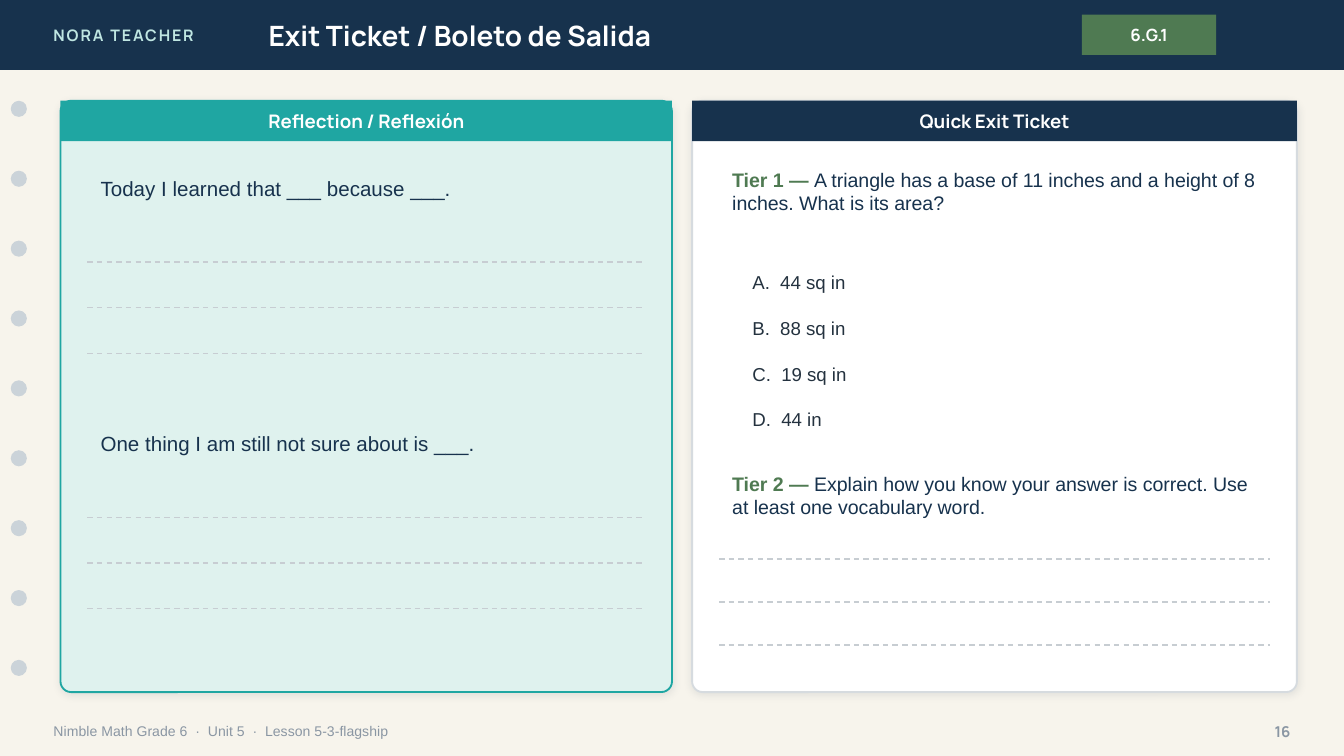
from lxml.etree import SubElement
from pptx import Presentation
from pptx.dml.color import RGBColor
from pptx.enum.dml import MSO_LINE
from pptx.enum.shapes import MSO_CONNECTOR, MSO_SHAPE
from pptx.enum.text import MSO_ANCHOR, PP_ALIGN
from pptx.oxml.ns import qn
from pptx.util import Inches, Pt

NAVY, TEAL, GREEN, WHITE = "17324D", "1FA6A2", "4F7A52", "FFFFFF"
MINT, CREAM, GRAY, RULE = "DFF2EE", "F7F4EC", "8A96A3", "C7CDD2"
HEADING, BODY = "Manrope", "Arial"

BRAND = "NORA TEACHER"
TITLE = "Exit Ticket / Boleto de Salida"
STANDARD = "6.G.1"
FOOTER = "Nimble Math Grade 6  ·  Unit 5  ·  Lesson 5-3-flagship"
PAGE = "16"
PROMPTS = ["Today I learned that ___ because ___.",
           "One thing I am still not sure about is ___."]
QUESTIONS = [
    ("Tier 1 — ", "A triangle has a base of 11 inches and a height of 8 inches. "
                  "What is its area?", 1.2, 0.7),
    ("Tier 2 — ", "Explain how you know your answer is correct. "
                  "Use at least one vocabulary word.", 3.46, 0.55),
]
CHOICES = ["A.  44 sq in", "B.  88 sq in", "C.  19 sq in", "D.  44 in"]
PANELS = [
    ("Reflection / Reflexión", 0.45, 4.55, MINT, TEAL, TEAL),
    ("Quick Exit Ticket", 5.15, 4.5, WHITE, "D6DBDF", NAVY),
]

WIDTH, HEIGHT = 10, 10 * 9 / 16
HEADER_HEIGHT = 0.52
PANEL_TOP, PANEL_HEIGHT, PANEL_HEADER, PADDING = 0.75, 4.4, 0.3, 0.2
HOLE_COUNT, HOLE_SIZE, HOLE_STEP = 9, 0.12, 0.52
RULE_COUNT, ROW_STEP, PROMPT_STEP = 3, 0.34, 1.9

presentation = Presentation()
presentation.slide_width = Inches(WIDTH)
presentation.slide_height = Inches(HEIGHT)
slide = presentation.slides.add_slide(presentation.slide_layouts[6])


def color(value):
    return RGBColor.from_string(value)


def write(shape, runs, size, font=BODY, align=PP_ALIGN.LEFT,
          anchor=MSO_ANCHOR.MIDDLE, spacing=None):
    frame = shape.text_frame
    frame.word_wrap = True
    frame.vertical_anchor = anchor
    paragraph = frame.paragraphs[0]
    paragraph.alignment = align
    for text, ink, bold in runs:
        run = paragraph.add_run()
        run.text = text
        run.font.size = Pt(size)
        run.font.name = font
        run.font.bold = bold
        run.font.color.rgb = color(ink)
        if spacing:
            run.font._element.set("spc", str(spacing * 100))


def add_text(left, top, width, height, runs, size, **style):
    box = slide.shapes.add_textbox(*map(Inches, (left, top, width, height)))
    write(box, runs, size, **style)


def add_block(kind, left, top, width, height, fill, line=None):
    shape = slide.shapes.add_shape(kind, *map(Inches, (left, top, width, height)))
    shape.shadow.inherit = False
    shape.fill.solid()
    shape.fill.fore_color.rgb = color(fill)
    if line:
        shape.line.color.rgb = color(line)
        shape.line.width = Pt(1)
    else:
        shape.line.fill.background()
    return shape


def add_label(left, top, width, height, fill, text, size):
    shape = add_block(MSO_SHAPE.RECTANGLE, left, top, width, height, fill)
    write(shape, [(text, WHITE, True)], size, font=HEADING, align=PP_ALIGN.CENTER)


def add_soft_shadow(shape):
    effects = shape._element.spPr.find(qn("a:effectLst"))
    shadow = SubElement(effects, qn("a:outerShdw"), blurRad=str(Pt(4)),
                        dist=str(Pt(1)), dir="5400000", rotWithShape="0")
    tint = SubElement(shadow, qn("a:srgbClr"), val="1C2E42")
    SubElement(tint, qn("a:alpha"), val="10000")


def add_rules(left, top, width, step):
    for index in range(RULE_COUNT):
        y = Inches(top + index * step)
        rule = slide.shapes.add_connector(
            MSO_CONNECTOR.STRAIGHT, Inches(left), y, Inches(left + width), y)
        rule.line.color.rgb = color(RULE)
        rule.line.width = Pt(0.75)
        rule.line.dash_style = MSO_LINE.DASH
        SubElement(rule._element.spPr, qn("a:effectLst"))


def add_panel(title, left, width, fill, border, header):
    panel = add_block(MSO_SHAPE.ROUNDED_RECTANGLE, left, PANEL_TOP, width,
                      PANEL_HEIGHT, fill, border)
    panel.adjustments[0] = 0.018
    add_soft_shadow(panel)
    add_label(left, PANEL_TOP, width, PANEL_HEADER, header, title, 10)
    return left + PADDING, width - 2 * PADDING


slide.background.fill.solid()
slide.background.fill.fore_color.rgb = color(CREAM)

add_block(MSO_SHAPE.RECTANGLE, 0, 0, WIDTH, HEADER_HEIGHT, NAVY)
add_text(0.3, 0, 2.4, HEADER_HEIGHT, [(BRAND, "BFE6E2", True)], 8.5,
         font=HEADING, spacing=1)
add_text(1.9, 0, 5.6, HEADER_HEIGHT, [(TITLE, WHITE, True)], 15, font=HEADING)
add_label(8.05, 0.11, 1, 0.3, GREEN, STANDARD, 9)

for index in range(HOLE_COUNT):
    add_block(MSO_SHAPE.OVAL, 0.08, PANEL_TOP + index * HOLE_STEP,
              HOLE_SIZE, HOLE_SIZE, "CBD3D9")

add_text(0.3, 5.3, 7, 0.28, [(FOOTER, GRAY, False)], 7.5)
add_text(9.2, 5.3, 0.5, 0.28, [(PAGE, GRAY, True)], 8, font=HEADING,
         align=PP_ALIGN.RIGHT)

left, width = add_panel(*PANELS[0])
for index, prompt in enumerate(PROMPTS):
    top = 1.2 + index * PROMPT_STEP
    add_text(left, top, width, 0.4, [(prompt, NAVY, False)], 11)
    add_rules(left, top + 0.75, width, ROW_STEP)

left, width = add_panel(*PANELS[1])
for tier, question, top, height in QUESTIONS:
    add_text(left, top, width, height,
             [(tier, GREEN, True), (question, NAVY, False)], 10.5,
             anchor=MSO_ANCHOR.TOP)
for index, choice in enumerate(CHOICES):
    add_text(left + 0.15, 1.95 + index * ROW_STEP, width - 0.2, 0.3,
             [(choice, "24323F", False)], 10)
add_rules(left, 4.16, width, 0.32)

presentation.save("out.pptx")
